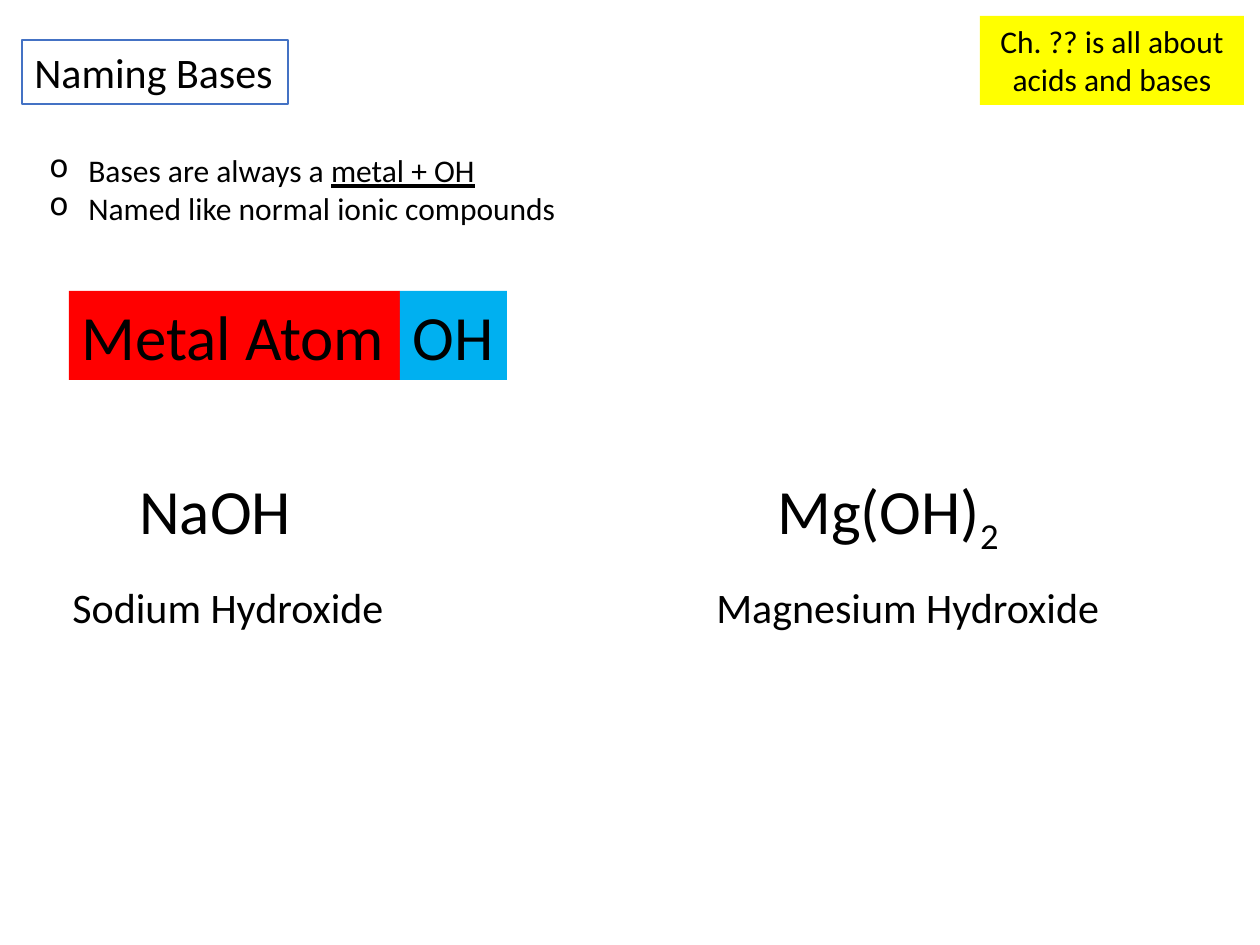
from lxml.etree import SubElement
from pptx import Presentation
from pptx.dml.color import RGBColor
from pptx.enum.shapes import MSO_SHAPE
from pptx.enum.text import MSO_ANCHOR, MSO_AUTO_SIZE, PP_ALIGN
from pptx.oxml.ns import qn
from pptx.util import Pt

PX = 914400 // 126  # EMU per px
FONT = "Calibri"
BLACK = RGBColor(0x00, 0x00, 0x00)
WHITE = RGBColor(0xFF, 0xFF, 0xFF)
BLUE = RGBColor(0x44, 0x72, 0xC4)
YELLOW = RGBColor(0xFF, 0xFF, 0x00)
RED = RGBColor(0xFF, 0x00, 0x00)
SKY = RGBColor(0x00, 0xB0, 0xF0)

# Each paragraph is a list of (text, style) spans; boxes are left, top, width, height
TITLE = ((22, 40, 266, 64), [[("Naming Bases", "")]], 24)
RULES = ((37, 145, 533, 89), [
    [("Bases are always a ", ""), ("metal + OH", "underline")],
    [("Named like normal ionic compounds", "")],
], 18)
CHAPTER_NOTE = ((980, 16, 264, 89), [[("Ch. ?? is all about acids and bases", "")]], 18)
FORMULA_PARTS = [("Metal Atom", 331, RED), ("OH", 107, SKY)]
FORMULA_LEFT, FORMULA_TOP, FORMULA_HEIGHT = 69, 291, 89
# Formula spans, left, width; then name, left, width
EXAMPLES = [
    ([("NaOH", "")], 127, 179, "Sodium Hydroxide", 60, 339),
    ([("Mg(OH)", ""), ("2", "subscript")], 765, 252, "Magnesium Hydroxide", 704, 412),
]
EXAMPLE_TOP, EXAMPLE_HEIGHT = 465, 89
NAME_TOP, NAME_HEIGHT = 575, 63
BULLET_INDENT = 39


def write(box, paragraphs, size, wrap=False, align=PP_ALIGN.LEFT):
    frame = box.text_frame
    frame.word_wrap = wrap
    frame.auto_size = MSO_AUTO_SIZE.SHAPE_TO_FIT_TEXT
    frame.vertical_anchor = MSO_ANCHOR.TOP
    for index, spans in enumerate(paragraphs):
        para = frame.add_paragraph() if index else frame.paragraphs[0]
        para.alignment = align
        para.font.name, para.font.size = FONT, Pt(size)
        para.font.color.rgb = BLACK
        for text, style in spans:
            span = para.add_run()
            span.text = text
            if style == "underline":
                span.font.underline = True
            elif style == "subscript":
                span.font._element.set("baseline", "-25000")


def add_text(shapes, place, paragraphs, size):
    box = shapes.add_textbox(*(n * PX for n in place))
    write(box, paragraphs, size)
    return box


def add_panel(shapes, place, paragraphs, size, fill, line=None, **layout):
    box = shapes.add_shape(MSO_SHAPE.RECTANGLE, *(n * PX for n in place))
    box.shadow.inherit = False
    box.fill.solid()
    box.fill.fore_color.rgb = fill
    if line is None:
        box.line.fill.background()
    else:
        box.line.color.rgb = line
        box.line.width = Pt(1)
    write(box, paragraphs, size, **layout)


def add_bullets(box):
    for para in box.text_frame.paragraphs:
        props = para._p.get_or_add_pPr()
        props.set("marL", str(BULLET_INDENT * PX))
        props.set("indent", str(-BULLET_INDENT * PX))
        SubElement(props, qn("a:buChar")).set("char", "o")
        # Paragraph font defaults come after the bullet
        defaults = props.find(qn("a:defRPr"))
        if defaults is not None:
            props.append(defaults)


deck = Presentation()
deck.slide_width, deck.slide_height = 1260 * PX, 945 * PX
page = deck.slides.add_slide(deck.slide_layouts[6])

# Heading, rules and chapter note
add_panel(page.shapes, *TITLE, WHITE, BLUE)
add_bullets(add_text(page.shapes, *RULES))
add_panel(page.shapes, *CHAPTER_NOTE, YELLOW, wrap=True, align=PP_ALIGN.CENTER)

# General formula: adjoining blocks in one group
formula = page.shapes.add_group_shape()
left = FORMULA_LEFT
for label, width, fill in FORMULA_PARTS:
    add_panel(formula.shapes, (left, FORMULA_TOP, width, FORMULA_HEIGHT),
              [[(label, "")]], 36, fill)
    left += width

# Example formulas with their names
for spans, left, width, name, name_left, name_width in EXAMPLES:
    add_text(page.shapes, (left, EXAMPLE_TOP, width, EXAMPLE_HEIGHT), [spans], 36)
    add_text(page.shapes, (name_left, NAME_TOP, name_width, NAME_HEIGHT), [[(name, "")]], 24)

deck.save("out.pptx")
